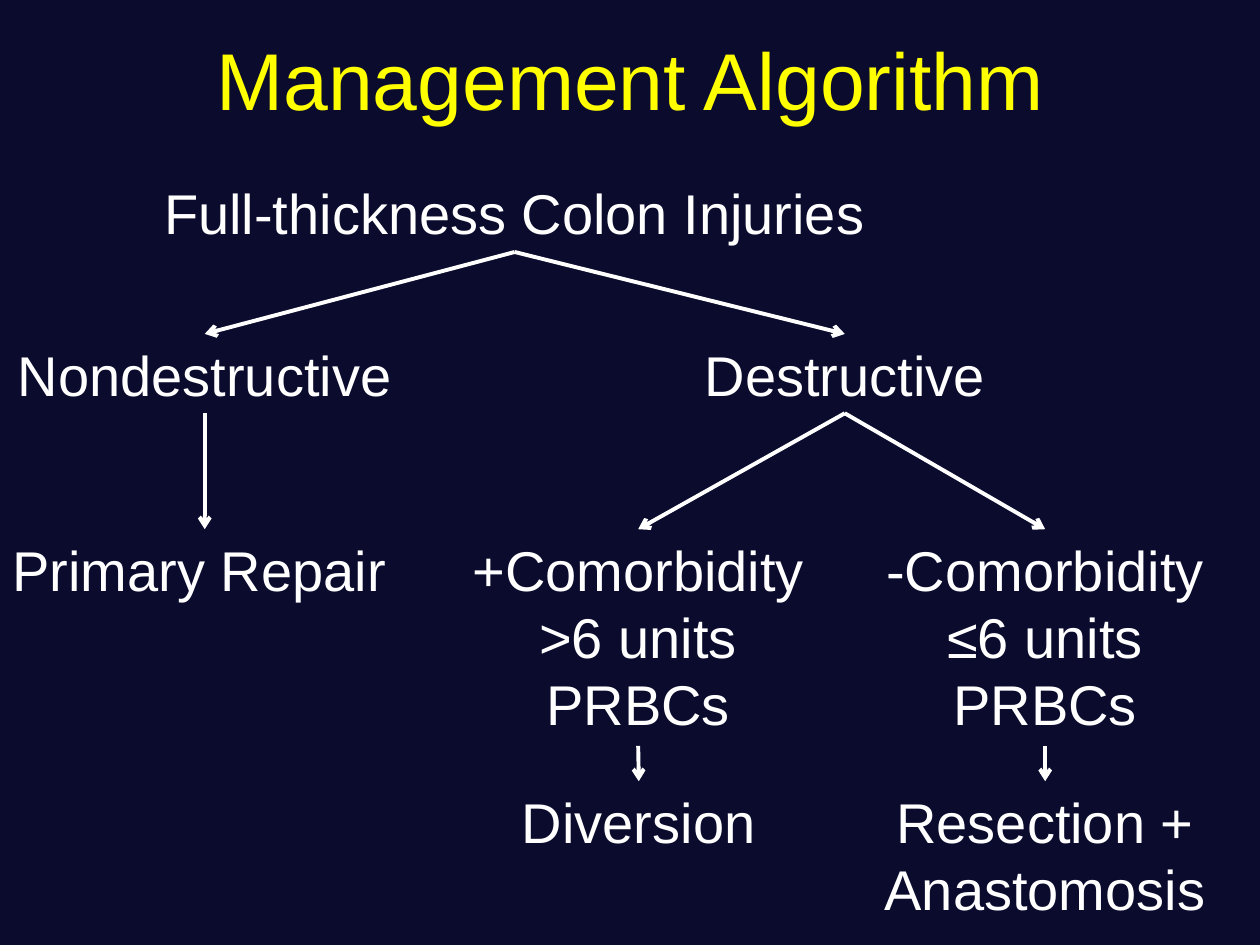
from pptx import Presentation
from pptx.dml.color import RGBColor
from pptx.enum import shapes, text
from pptx.oxml.ns import qn
from pptx.util import Inches, Pt
from lxml import etree

# Content
TITLE = "Management Algorithm"
ROW_TOPS = [1.37, 2.65, 4.2, 6.2]
LINE_HEIGHT = 0.63
CENTER, LEFT = text.PP_ALIGN.CENTER, text.PP_ALIGN.LEFT

# step: (wording, row, left, width, height, alignment)
STEPS = {
    "injuries": ("Full-thickness Colon Injuries", 0, 0.75, 6.67, LINE_HEIGHT, CENTER),
    "nondestructive": ("Nondestructive", 1, 0, 3.25, LINE_HEIGHT, CENTER),
    "destructive": ("Destructive", 1, 5.33, 2.75, LINE_HEIGHT, CENTER),
    "repair": ("Primary Repair", 2, 0, 3.25, LINE_HEIGHT, LEFT),
    "high risk": ("+Comorbidity >6 units PRBCs", 2, 3.42, 3.29, 1.72, CENTER),
    "low risk": ("-Comorbidity ≤6 units PRBCs", 2, 6.71, 3.17, 1.72, CENTER),
    "diversion": ("Diversion", 3, 3.96, 2.22, LINE_HEIGHT, CENTER),
    "resection": ("Resection + Anastomosis", 3, 6.71, 3.17, 1.2, CENTER),
}
BRANCHES = [
    ("injuries", "nondestructive"),
    ("injuries", "destructive"),
    ("nondestructive", "repair"),
    ("destructive", "high risk"),
    ("destructive", "low risk"),
    ("high risk", "diversion"),
    ("low risk", "resection"),
]
THEME = {
    "font": "Arial",
    "background": RGBColor(0x0A, 0x0B, 0x2D),
    "title": RGBColor(0xFF, 0xFF, 0x00),
    "ink": RGBColor(0xFF, 0xFF, 0xFF),
    "title size": Pt(46),
    "step size": Pt(32),
    "line width": Pt(2.25),
}
BOTTOM, TOP = 2, 0


def write(frame, wording, size, color, alignment):
    frame.text = wording
    frame.word_wrap = True
    paragraph = frame.paragraphs[0]
    paragraph.alignment = alignment
    font = paragraph.runs[0].font
    font.name, font.size, font.color.rgb = THEME["font"], size, color


def add_step(slide, wording, row, left, width, height, alignment):
    step = slide.shapes.add_textbox(
        Inches(left), Inches(ROW_TOPS[row]), Inches(width), Inches(height))
    write(step.text_frame, wording, THEME["step size"], THEME["ink"], alignment)
    step.text_frame.auto_size = text.MSO_AUTO_SIZE.SHAPE_TO_FIT_TEXT
    return step


def add_arrow(slide, cause, result):
    arrow = slide.shapes.add_connector(shapes.MSO_CONNECTOR.STRAIGHT, 0, 0, 0, 0)
    arrow.begin_connect(cause, BOTTOM)
    arrow.end_connect(result, TOP)
    arrow.line.color.rgb = THEME["ink"]
    arrow.line.width = THEME["line width"]
    etree.SubElement(arrow.line._get_or_add_ln(), qn("a:tailEnd"), type="arrow")
    etree.SubElement(arrow._element.spPr, qn("a:effectLst"))


def main():
    deck = Presentation()
    deck.slide_width, deck.slide_height = Inches(10), Inches(7.5)
    slide = deck.slides.add_slide(deck.slide_layouts[5])
    slide.background.fill.solid()
    slide.background.fill.fore_color.rgb = THEME["background"]

    # Title
    title = slide.shapes.title
    title.left, title.top = Inches(0), Inches(0)
    title.width, title.height = Inches(10), Inches(1.25)
    write(title.text_frame, TITLE, THEME["title size"], THEME["title"], CENTER)
    title.text_frame.vertical_anchor = text.MSO_ANCHOR.MIDDLE

    # Decision tree
    steps = {key: add_step(slide, *step) for key, step in STEPS.items()}
    for cause, result in BRANCHES:
        add_arrow(slide, steps[cause], steps[result])

    deck.save("out.pptx")


if __name__ == "__main__":
    main()
